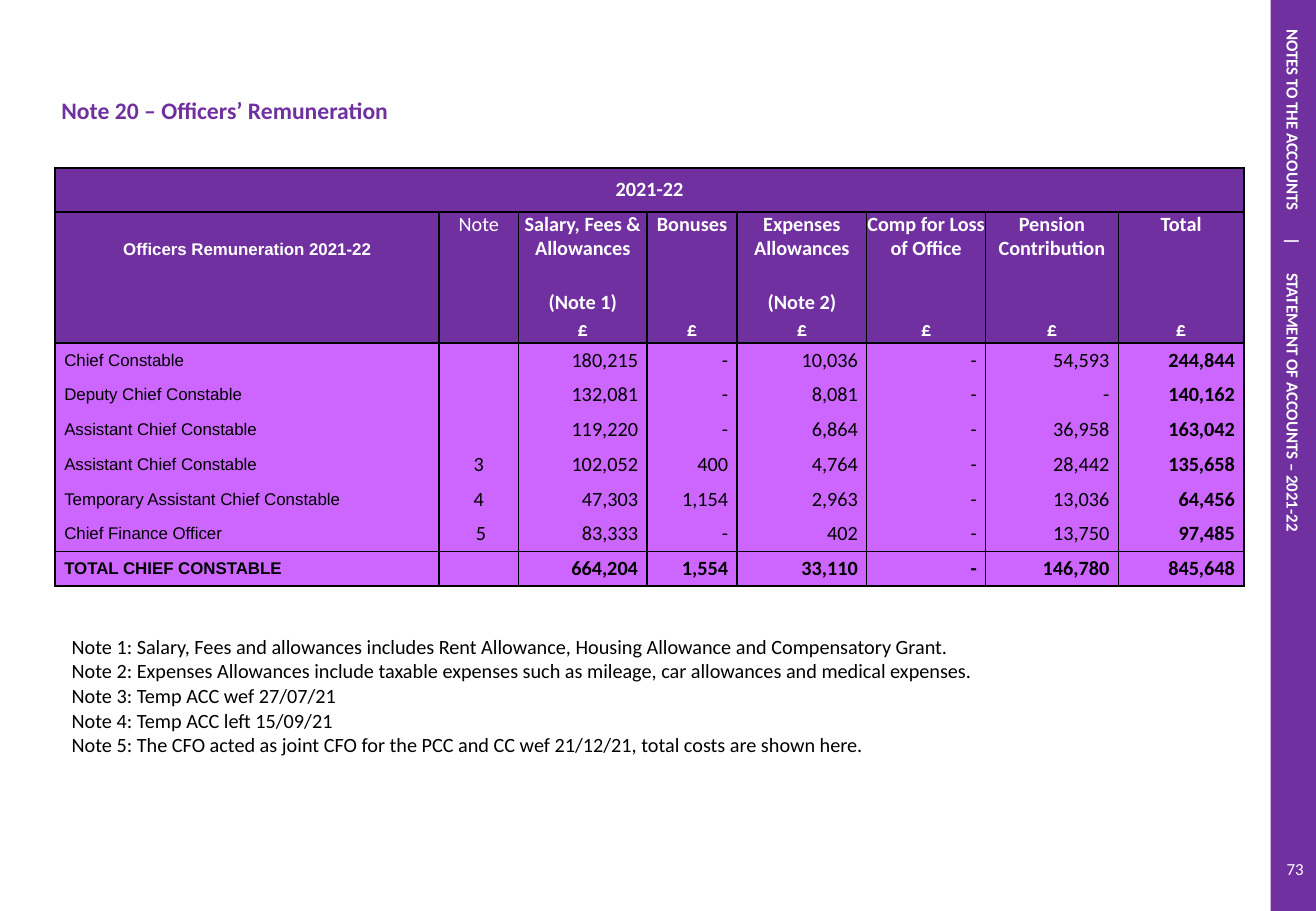
from dataclasses import dataclass

from lxml.etree import SubElement
from pptx import Presentation
from pptx.dml.color import RGBColor
from pptx.enum.shapes import MSO_SHAPE
from pptx.enum.text import MSO_ANCHOR, PP_ALIGN
from pptx.oxml.ns import qn
from pptx.util import Pt

NO_STYLE = "{2D5ABB26-0587-4C30-8999-92F81FD0307C}"
LEFT, CENTER, RIGHT = PP_ALIGN.LEFT, PP_ALIGN.CENTER, PP_ALIGN.RIGHT


@dataclass(frozen=True)
class Theme:
    purple: str = "7030A0"
    violet: str = "CC66FF"
    white: str = "FFFFFF"
    black: str = "000000"
    font: str = "Calibri"
    label_font: str = "Arial"
    title_size: int = 14
    body_size: int = 12
    small_size: int = 10
    spacer_size: int = 6


THEME = Theme()

COLUMN_WIDTHS = [227.6, 47.2, 76.1, 53.4, 76.9, 70.5, 78.6, 74.5]
HEADER_HEIGHTS = [25.9, 45.4, 17.3, 15.1]
BODY_HEIGHT = 20.6
HEADER_ROWS = [
    ["2021-22"] + [""] * 7,
    ["Officers Remuneration 2021-22", "Note", "Salary, Fees & Allowances", "Bonuses",
     "Expenses Allowances", "Comp for Loss of Office", "Pension Contribution", "Total"],
    ["", "", "(Note 1)", "", "(Note 2)", "", "", ""],
    ["", ""] + ["£"] * 6,
]
OFFICER_ROWS = [
    ["Chief Constable", "", "180,215", "-", "10,036", "-", "54,593", "244,844"],
    ["Deputy Chief Constable", "", "132,081", "-", "8,081", "-", "-", "140,162"],
    ["Assistant Chief Constable", "", "119,220", "-", "6,864", "-", "36,958", "163,042"],
    ["Assistant Chief Constable", "3", "102,052", "400", "4,764", "-", "28,442", "135,658"],
    ["Temporary Assistant Chief Constable", "4", "47,303", "1,154", "2,963", "-", "13,036", "64,456"],
    ["Chief Finance Officer", " 5", "83,333", "-", "402", "-", "13,750", "97,485"],
    ["TOTAL CHIEF CONSTABLE", "", "664,204", "1,554", "33,110", "-", "146,780", "845,648"],
]
NOTES = [
    "Note 1: Salary, Fees and allowances includes Rent Allowance, Housing Allowance and Compensatory Grant.",
    "Note 2: Expenses Allowances include taxable expenses such as mileage, car allowances and medical expenses.",
    "Note 3: Temp ACC wef 27/07/21",
    "Note 4: Temp ACC left 15/09/21",
    "Note 5: The CFO acted as joint CFO for the PCC and CC wef 21/12/21, total costs are shown here.",
]


def write(frame, *lines, size=THEME.body_size, font=THEME.font, color=THEME.black,
          bold=False, align=LEFT):
    """Write one paragraph per line; a line is a string or a tuple of runs."""
    for index, line in enumerate(lines):
        paragraph = frame.paragraphs[0] if index == 0 else frame.add_paragraph()
        paragraph.alignment = align
        if not line:
            # The end mark keeps an empty cell from growing its row.
            SubElement(paragraph._p, qn("a:endParaRPr"), sz=str(size * 100))
            continue
        for text in (line,) if isinstance(line, str) else line:
            run = paragraph.add_run()
            run.text = text
            run.font.size = Pt(size)
            run.font.name = font
            run.font.bold = bold
            run.font.color.rgb = RGBColor.from_string(color)


def set_margins(target, left=0, top=0, right=0, bottom=0):
    target.margin_left, target.margin_top = Pt(left), Pt(top)
    target.margin_right, target.margin_bottom = Pt(right), Pt(bottom)


class SlideBuilder:
    def __init__(self, slide, theme):
        self.slide = slide
        self.theme = theme

    def sidebar(self, left, top, width, height, *sections, indent, gap):
        """Draw a band with two sections of downward text, set apart by a bar."""
        shape = self.slide.shapes.add_shape(
            MSO_SHAPE.RECTANGLE, Pt(left), Pt(top), Pt(width), Pt(height))
        shape.shadow.inherit = False
        shape.fill.solid()
        shape.fill.fore_color.rgb = RGBColor.from_string(self.theme.purple)
        shape.line.fill.background()
        frame = shape.text_frame
        set_margins(frame)
        frame.vertical_anchor = MSO_ANCHOR.MIDDLE
        frame._txBody.bodyPr.set("vert", "vert")
        first, second = sections
        write(frame, (first, " ", "|", " ", second), size=self.theme.small_size,
              color=self.theme.white, bold=True)
        paragraph = frame.paragraphs[0]
        properties = paragraph._p.get_or_add_pPr()
        properties.set("marL", str(Pt(indent)))
        properties.set("indent", "0")
        for run in paragraph.runs:
            if run.text == " ":
                run.font._element.set("spc", str(gap * 100))

    def text_box(self, left, top, width, height, text, margins, **text_format):
        frame = self.slide.shapes.add_textbox(
            Pt(left), Pt(top), Pt(width), Pt(height)).text_frame
        frame.word_wrap = True
        frame.vertical_anchor = MSO_ANCHOR.MIDDLE
        set_margins(frame, **margins)
        write(frame, text, **text_format)

    def table(self, left, top, widths, heights):
        table = self.slide.shapes.add_table(
            len(heights), len(widths), Pt(left), Pt(top),
            Pt(sum(widths)), Pt(sum(heights))).table
        table.first_row = table.horz_banding = False
        table._tbl.tblPr.find(qn("a:tableStyleId")).text = NO_STYLE
        for column, width in zip(table.columns, widths):
            column.width = Pt(width)
        for row, height in zip(table.rows, heights):
            row.height = Pt(height)
        return table

    def cell(self, cell, *lines, anchor=MSO_ANCHOR.MIDDLE, fill=None, edges="",
             margins=None, **text_format):
        """Fill a table cell; edges names its ruled sides by L, R, T and B."""
        set_margins(cell, **(margins or {}))
        cell.vertical_anchor = anchor
        properties = cell._tc.get_or_add_tcPr()
        for edge in "LRTB":
            line = SubElement(properties, qn(f"a:ln{edge}"), w=str(Pt(1)))
            if edge in edges:
                solid = SubElement(line, qn("a:solidFill"))
                SubElement(solid, qn("a:srgbClr"), val=self.theme.black)
            else:
                SubElement(line, qn("a:noFill"))
        if fill:
            cell.fill.solid()
            cell.fill.fore_color.rgb = RGBColor.from_string(fill)
        write(cell.text_frame, *lines, **text_format)

    def header_cell(self, cell, text, row, column):
        is_label = row == 1 and column == 0
        self.cell(
            cell, text, fill=self.theme.purple,
            edges="LR" + {0: "TB", 1: "T", 3: "B"}.get(row, ""),
            anchor=MSO_ANCHOR.MIDDLE if row in (0, 2) or is_label else MSO_ANCHOR.TOP,
            size=self.theme.small_size if is_label else self.theme.body_size,
            font=self.theme.label_font if is_label else self.theme.font,
            color=self.theme.white, bold=text != "Note", align=CENTER)

    def officer_cell(self, cell, text, row, column):
        last = len(OFFICER_ROWS) - 1
        style = dict(bold=row == last or column == len(COLUMN_WIDTHS) - 1)
        if column == 0:
            style.update(size=self.theme.small_size, font=self.theme.label_font,
                         margins=dict(left=5.5))
        elif column == 1:
            style.update(align=CENTER)
        else:
            style.update(align=RIGHT, margins=dict(right=5.3))
        edges = "LR" + "T" * (row in (0, last)) + "B" * (row >= last - 1)
        self.cell(cell, text, fill=self.theme.violet, edges=edges, **style)

    def remuneration_table(self, left, top):
        heights = HEADER_HEIGHTS + [BODY_HEIGHT] * len(OFFICER_ROWS)
        table = self.table(left, top, COLUMN_WIDTHS, heights)
        table.cell(0, 0).merge(table.cell(0, len(COLUMN_WIDTHS) - 1))
        blocks = [(0, HEADER_ROWS, self.header_cell),
                  (len(HEADER_ROWS), OFFICER_ROWS, self.officer_cell)]
        for start, rows, draw_cell in blocks:
            for row, texts in enumerate(rows):
                for column, text in enumerate(texts):
                    draw_cell(table.cell(start + row, column), text, row, column)

    def title_table(self, left, top, text):
        table = self.table(left, top, [234.5] * 3, [10.5, 28])
        table.cell(1, 0).merge(table.cell(1, 1))
        for column in range(3):
            self.cell(table.cell(0, column), "", size=self.theme.spacer_size)
        self.cell(table.cell(1, 0), text, anchor=MSO_ANCHOR.TOP,
                  margins=dict(left=7.2, top=2.9, right=7.2, bottom=2.9),
                  size=self.theme.title_size, color=self.theme.purple, bold=True)


def main():
    presentation = Presentation()
    presentation.slide_width, presentation.slide_height = Pt(780), Pt(540)
    slide = presentation.slides.add_slide(presentation.slide_layouts[6])
    builder = SlideBuilder(slide, THEME)

    builder.sidebar(753.1, 0, 26.9, 541.4, "NOTES TO THE ACCOUNTS",
                    "STATEMENT OF ACCOUNTS – 2021-22", indent=17.2, gap=14)
    builder.text_box(755.3, 500.4, 24.5, 28.8, "73", dict(right=7.2),
                     size=THEME.small_size, color=THEME.white, align=RIGHT)
    builder.title_table(29.2, 43.9, "Note 20 – Officers’ Remuneration")
    builder.remuneration_table(32.6, 99.7)

    notes = builder.table(42.5, 371.5, [676.8], [19.4, 58.6])
    for row, lines in enumerate([NOTES[:1], NOTES[1:]]):
        builder.cell(notes.cell(row, 0), *lines, anchor=MSO_ANCHOR.BOTTOM)

    presentation.save("out.pptx")


if __name__ == "__main__":
    main()
